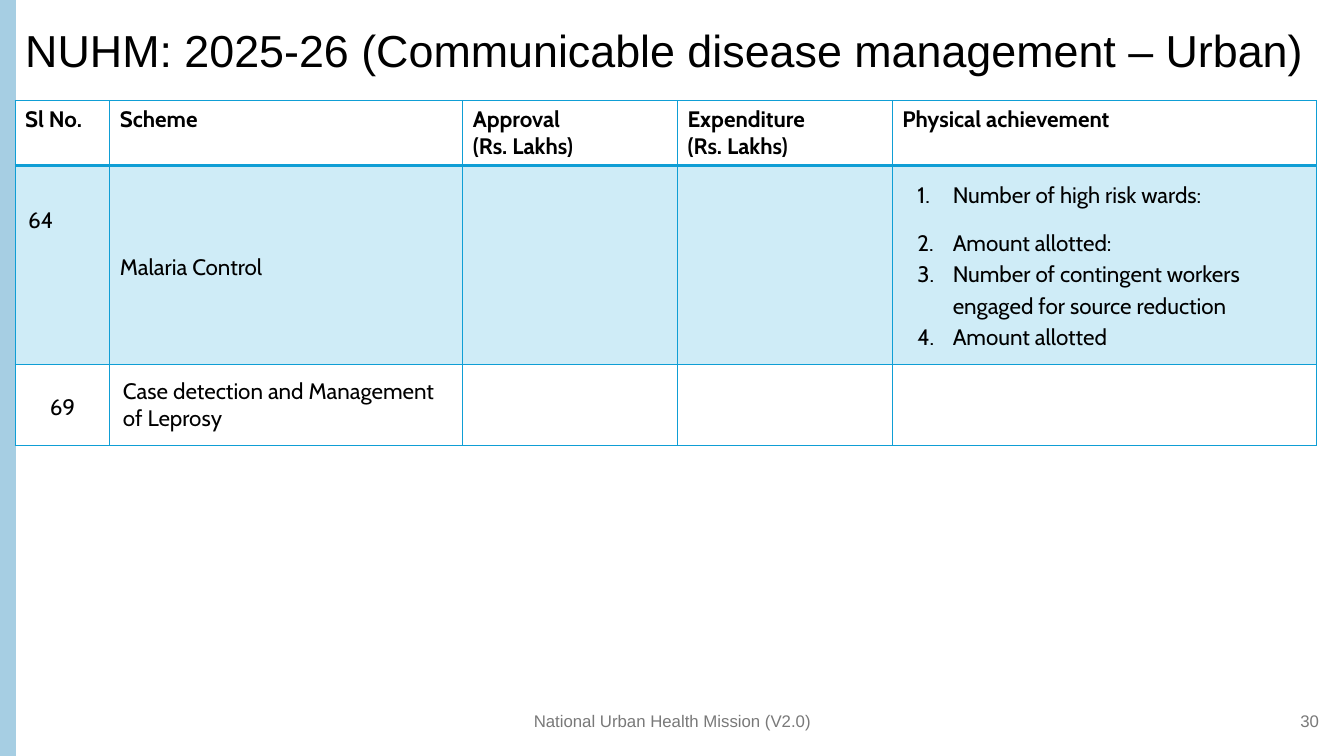
from lxml import etree
from pptx import Presentation
from pptx.dml.color import RGBColor
from pptx.enum.shapes import MSO_SHAPE as SHAPE
from pptx.enum.text import MSO_ANCHOR as ANCHOR, PP_ALIGN as ALIGN
from pptx.oxml.ns import qn
from pptx.util import Inches, Pt

BLACK = RGBColor(0x00, 0x00, 0x00)
GREY = RGBColor(0x79, 0x79, 0x79)
BAR_BLUE = RGBColor(0xA6, 0xCE, 0xE3)
BORDER_BLUE = RGBColor(0x0F, 0x9E, 0xD5)
BAND_BLUE = RGBColor(0xCF, 0xEC, 0xF7)

COLUMNS = [0.94, 3.5, 2.13, 2.13, 4.21]
ROWS = [0.64, 1.98, 0.8]
HEADERS = ["Sl No.", "Scheme", "Approval\n(Rs. Lakhs)",
           "Expenditure\n(Rs. Lakhs)", "Physical achievement"]
MALARIA_POINTS = [
    "Number of high risk wards:",
    "Amount allotted:",
    "Number of contingent workers engaged for source reduction",
    "Amount allotted",
]


class SlideBuilder:
    """Builds the elements of one slide in a shared style."""

    def __init__(self, prs):
        self.s = prs.slides.add_slide(prs.slide_layouts[5])
        self.body_font, self.heading_font = "Cabin", "Arial"

    def style(self, p, name, size, color, align=ALIGN.LEFT, bold=False):
        p.alignment = align
        p.font.name, p.font.size, p.font.bold = name, Pt(size), bold
        p.font.color.rgb = color

    def bar(self, x, y, w, h):
        sp = self.s.shapes.add_shape(SHAPE.RECTANGLE, *map(Inches, (x, y, w, h)))
        sp.shadow.inherit = False
        sp.fill.solid()
        sp.fill.fore_color.rgb = sp.line.color.rgb = BAR_BLUE
        sp.line.width = Pt(1.5)

    def title(self, text, x, y, w, h):
        sp = self.s.shapes.title
        sp.left, sp.top, sp.width, sp.height = map(Inches, (x, y, w, h))
        tf = sp.text_frame
        tf.text, tf.vertical_anchor = text, ANCHOR.MIDDLE
        p = tf.paragraphs[0]
        p.line_spacing = 0.9
        self.style(p, self.heading_font, 32, BLACK)

    def footer(self, text, x, w, align):
        sp = self.s.shapes.add_textbox(*map(Inches, (x, 6.95, w, 0.4)))
        tf = sp.text_frame
        tf.word_wrap, tf.text, tf.vertical_anchor = True, text, ANCHOR.MIDDLE
        self.style(tf.paragraphs[0], self.heading_font, 12, GREY, align)

    def table(self, x, y, columns, rows):
        frame = self.s.shapes.add_table(len(rows), len(columns), Inches(x), Inches(y),
                                        Inches(sum(columns)), Inches(sum(rows)))
        table = frame.table
        table.first_row = table.horz_banding = False
        for column, width in zip(table.columns, columns):
            column.width = Inches(width)
        for row, height in zip(table.rows, rows):
            row.height = Inches(height)
        for r in range(len(rows)):
            for c in range(len(columns)):
                self.cell_frame(table.cell(r, c), r)
        return table

    def cell_frame(self, cell, row):
        tc_pr = cell._tc.get_or_add_tcPr()
        for side in "LRTB":
            heavy = (row, side) in ((0, "B"), (1, "T"))
            ln = etree.SubElement(tc_pr, qn(f"a:ln{side}"), w=str(Pt(2 if heavy else 1)))
            fill = etree.SubElement(ln, qn("a:solidFill"))
            etree.SubElement(fill, qn("a:srgbClr"), val=str(BORDER_BLUE))
        if row == 1:
            cell.fill.solid()
            cell.fill.fore_color.rgb = BAND_BLUE
        else:
            cell.fill.background()
        self.style(cell.text_frame.paragraphs[0], self.body_font, 16, BLACK)

    def cell_text(self, cell, text, align=ALIGN.LEFT, bold=False, anchor=ANCHOR.TOP,
                  spacing=None, side=0.1, top=0.05, bottom=0.05):
        cell.text, cell.vertical_anchor = text, anchor
        cell.margin_left = cell.margin_right = Inches(side)
        cell.margin_top, cell.margin_bottom = Inches(top), Inches(bottom)
        for p in cell.text_frame.paragraphs:
            p.line_spacing = spacing
            self.style(p, self.body_font, 16, BLACK, align, bold)

    def numbered_cell(self, cell, points):
        self.cell_text(cell, "\n".join(points), spacing=1.15, top=0.13, bottom=0.13)
        for i, p in enumerate(cell.text_frame.paragraphs):
            p.space_before = Pt(12 if i < 2 else 0)
            p_pr = p._p.get_or_add_pPr()
            p_pr.set("marL", str(Inches(0.5)))
            p_pr.set("indent", str(Inches(-0.35)))
            number = etree.Element(qn("a:buAutoNum"), type="arabicPeriod")
            p_pr.find(qn("a:defRPr")).addprevious(number)


def main():
    prs = Presentation()
    prs.slide_width, prs.slide_height = Inches(13.33), Inches(7.5)
    b = SlideBuilder(prs)
    b.bar(0, 0, 0.15, 7.5)
    b.title("NUHM: 2025-26 (Communicable disease management – Urban)", 0.15, 0.15, 13.05, 0.75)
    b.footer("National Urban Health Mission (V2.0)", 4.42, 4.5, ALIGN.CENTER)
    b.footer("30", 10.18, 3, ALIGN.RIGHT)

    table = b.table(0.15, 1, COLUMNS, ROWS)
    for c, header in enumerate(HEADERS):
        b.cell_text(table.cell(0, c), header, bold=True)
    b.cell_text(table.cell(1, 0), "64", spacing=1.15, side=0.13, top=0.37)
    b.cell_text(table.cell(1, 1), "Malaria Control", anchor=ANCHOR.MIDDLE, spacing=1.15,
                top=0.13, bottom=0.13)
    b.numbered_cell(table.cell(1, 4), MALARIA_POINTS)
    b.cell_text(table.cell(2, 0), "69", ALIGN.CENTER, anchor=ANCHOR.MIDDLE, spacing=1.15,
                top=0.13, bottom=0.13)
    b.cell_text(table.cell(2, 1), "Case detection and Management of Leprosy",
                anchor=ANCHOR.MIDDLE, side=0.13, top=0.13, bottom=0.13)
    prs.save("out.pptx")


if __name__ == "__main__":
    main()
